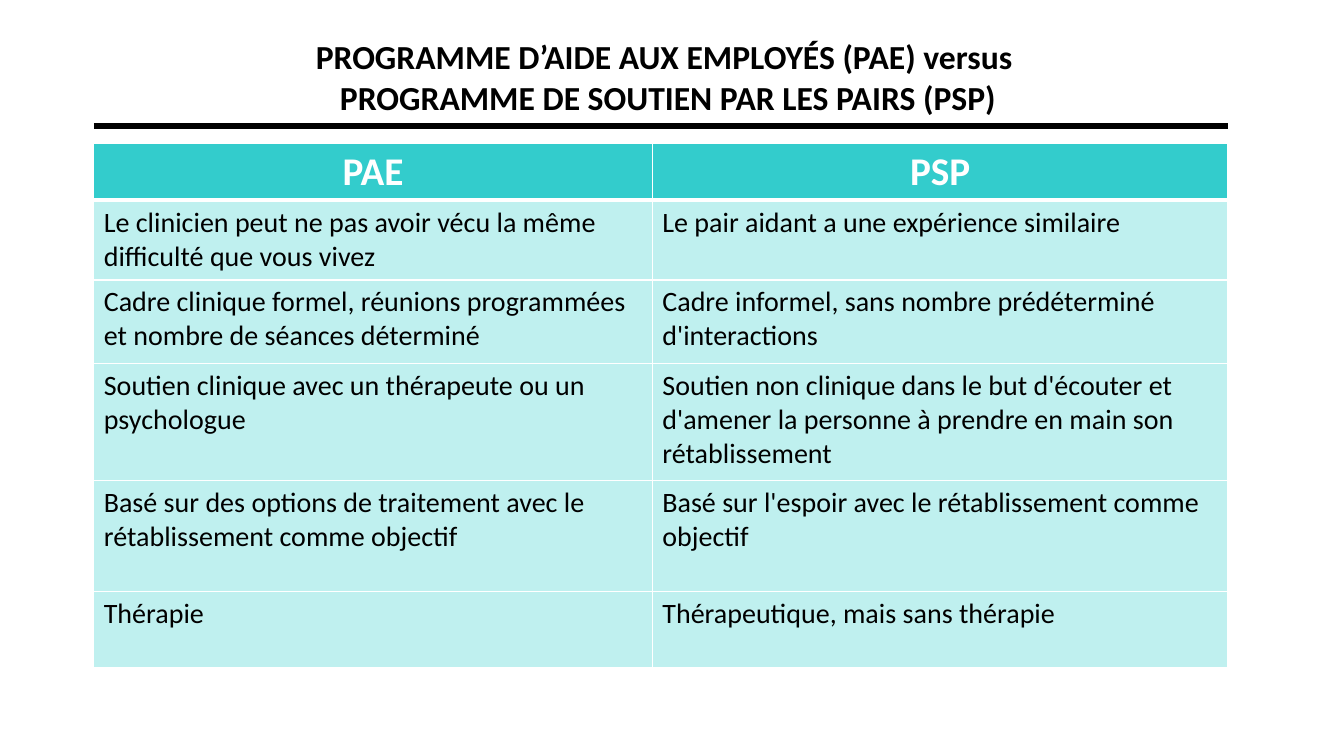
from lxml.etree import SubElement
from pptx import Presentation
from pptx.dml.color import RGBColor
from pptx.enum.shapes import MSO_CONNECTOR
from pptx.enum.text import PP_ALIGN
from pptx.oxml.ns import qn
from pptx.util import Inches, Pt

TITLE = [
    "PROGRAMME D’AIDE AUX EMPLOYÉS (PAE) versus ",
    "PROGRAMME DE SOUTIEN PAR LES PAIRS (PSP)",
]
COMPARISON = [
    ("PAE", "PSP"),
    ("Le clinicien peut ne pas avoir vécu la même difficulté que vous vivez",
     "Le pair aidant a une expérience similaire"),
    ("Cadre clinique formel, réunions programmées et nombre de séances déterminé",
     "Cadre informel, sans nombre prédéterminé d'interactions"),
    ("Soutien clinique avec un thérapeute ou un psychologue",
     "Soutien non clinique dans le but d'écouter et d'amener la personne "
     "à prendre en main son rétablissement"),
    ("Basé sur des options de traitement avec le rétablissement comme objectif",
     "Basé sur l'espoir avec le rétablissement comme objectif"),
    ("Thérapie", "Thérapeutique, mais sans thérapie"),
]
COLUMN_WIDTHS = [5.54, 5.71]
ROW_HEIGHTS = [0.54, 0.79, 0.83, 1.16, 1.1, 0.76]
LEFT, TABLE_TOP, RULE_Y = 0.93, 1.42, 1.25
WIDTH = sum(COLUMN_WIDTHS)

THEME = {
    "font": "Calibri",
    "black": "000000",
    "white": "FFFFFF",
    "header_fill": "33CCCC",
    "body_fill": "BFF0EF",
    "title": {"size": Pt(24), "bold": True},
    "header": {"size": Pt(28), "bold": True},
    "body": {"size": Pt(20), "bold": False},
    "rule": Pt(4.5),
    "border": Pt(1),
    "header_border": Pt(3),
}


def write(paragraph, wording, role, color, align):
    paragraph.alignment = align
    run = paragraph.add_run()
    run.text = wording
    for name, value in {"name": THEME["font"], **THEME[role]}.items():
        setattr(run.font, name, value)
    run.font.color.rgb = RGBColor.from_string(THEME[color])


def add_borders(cell, row):
    properties = cell._tc.get_or_add_tcPr()
    heavy_side = {0: "lnB", 1: "lnT"}.get(row)
    for side in ("lnL", "lnR", "lnT", "lnB"):
        weight = THEME["header_border" if side == heavy_side else "border"]
        border = SubElement(properties, qn(f"a:{side}"), w=str(int(weight)))
        fill = SubElement(border, qn("a:solidFill"))
        SubElement(fill, qn("a:srgbClr"), val=THEME["white"])


def add_title(slide):
    frame = slide.shapes.add_textbox(
        Inches(0.44), Inches(0.31), Inches(12.37), Inches(1.21)).text_frame
    frame.word_wrap = True
    for index, line in enumerate(TITLE):
        paragraph = frame.add_paragraph() if index else frame.paragraphs[0]
        write(paragraph, line, "title", "black", PP_ALIGN.CENTER)


def add_comparison(slide):
    table = slide.shapes.add_table(
        len(COMPARISON), len(COLUMN_WIDTHS), Inches(LEFT), Inches(TABLE_TOP),
        Inches(WIDTH), Inches(sum(ROW_HEIGHTS))).table
    for column, width in zip(table.columns, COLUMN_WIDTHS):
        column.width = Inches(width)
    for row, height in zip(table.rows, ROW_HEIGHTS):
        row.height = Inches(height)
    for row, entries in enumerate(COMPARISON):
        role, color, align = (("body", "black", PP_ALIGN.LEFT) if row
                              else ("header", "white", PP_ALIGN.CENTER))
        for column, entry in enumerate(entries):
            cell = table.cell(row, column)
            add_borders(cell, row)
            cell.fill.solid()
            cell.fill.fore_color.rgb = RGBColor.from_string(THEME[f"{role}_fill"])
            write(cell.text_frame.paragraphs[0], entry, role, color, align)


def add_rule(slide):
    rule = slide.shapes.add_connector(
        MSO_CONNECTOR.STRAIGHT, Inches(LEFT), Inches(RULE_Y),
        Inches(LEFT + WIDTH), Inches(RULE_Y))
    rule.line.color.rgb = RGBColor.from_string(THEME["black"])
    rule.line.width = THEME["rule"]
    SubElement(rule._element.spPr, qn("a:effectLst"))


def main():
    deck = Presentation()
    deck.slide_width, deck.slide_height = Inches(13.33), Inches(7.5)
    slide = deck.slides.add_slide(deck.slide_layouts[6])
    add_title(slide)
    add_comparison(slide)
    add_rule(slide)
    deck.save("out.pptx")


if __name__ == "__main__":
    main()
